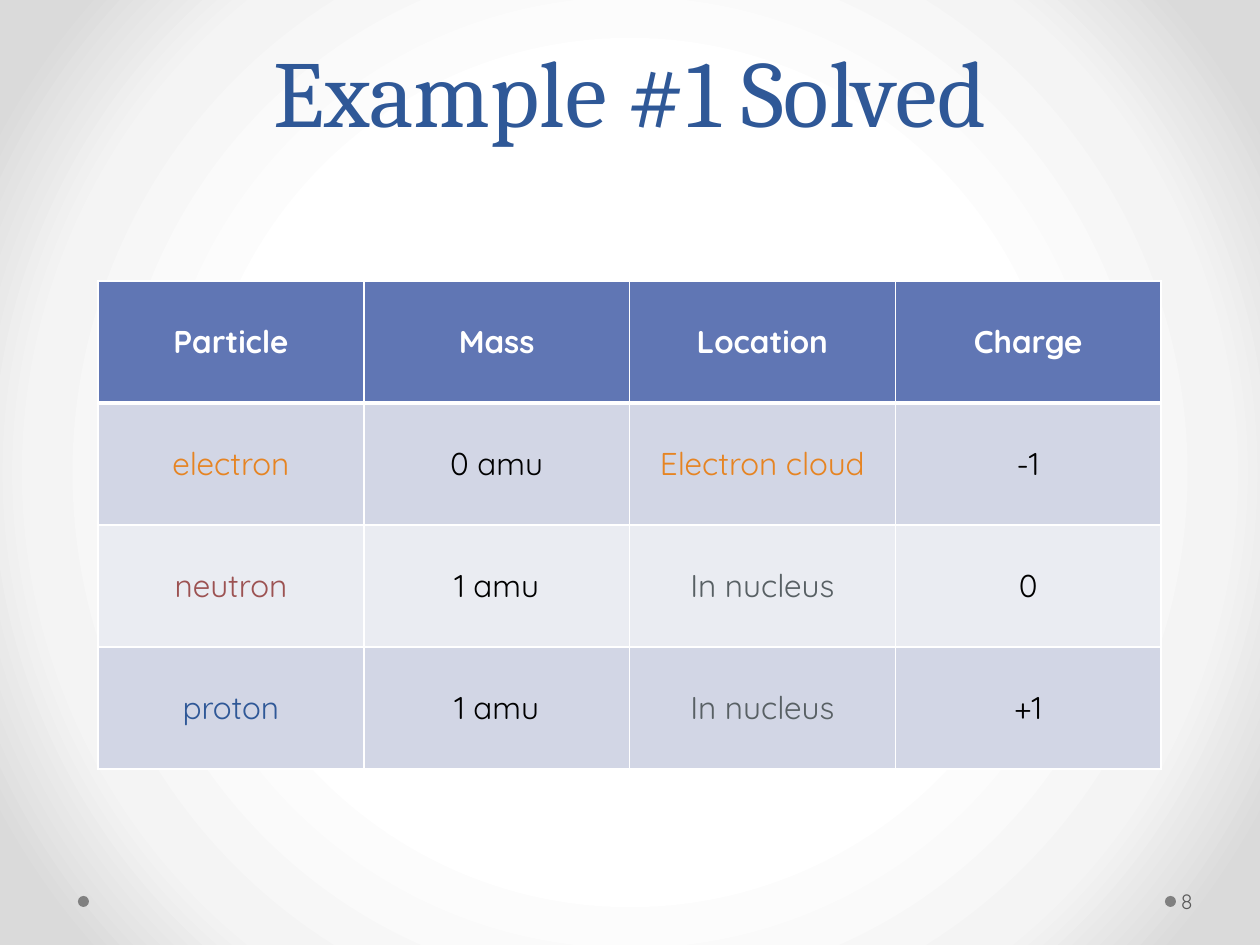
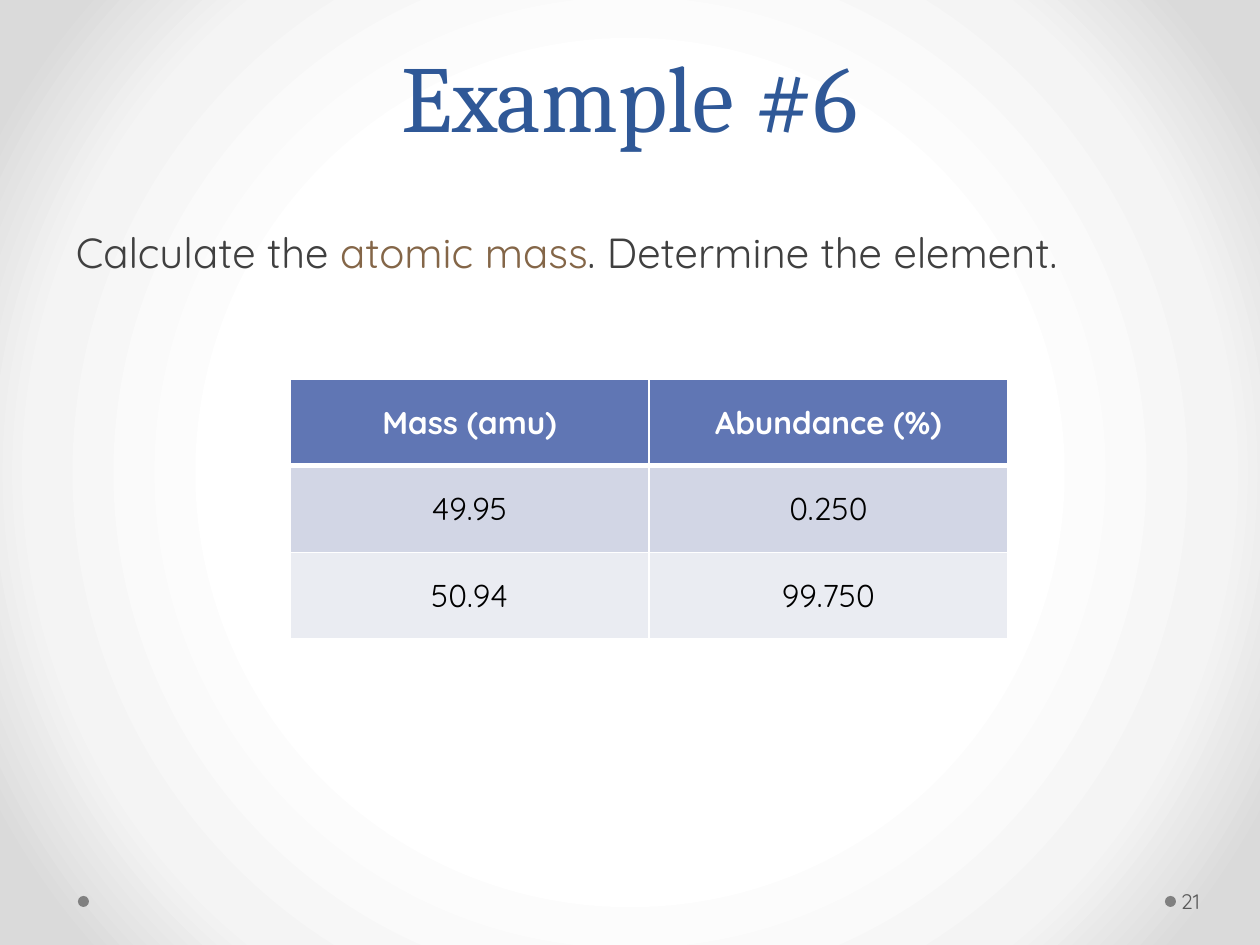
from dataclasses import dataclass

from lxml import etree
from pptx import Presentation
from pptx.dml.color import RGBColor
from pptx.enum.shapes import MSO_SHAPE
from pptx.enum.text import MSO_ANCHOR, MSO_AUTO_SIZE, PP_ALIGN
from pptx.oxml import parse_xml
from pptx.oxml.ns import qn
from pptx.util import Emu, Pt

ELLIPSE = MSO_SHAPE.OVAL
TOP, MIDDLE, BOTTOM = MSO_ANCHOR.TOP, MSO_ANCHOR.MIDDLE, MSO_ANCHOR.BOTTOM
LEFT, CENTER = PP_ALIGN.LEFT, PP_ALIGN.CENTER
NO_AUTOFIT = MSO_AUTO_SIZE.NONE

PX_PER_INCH = 126
TITLE_ONLY = 5
A_NS = "http://schemas.openxmlformats.org/drawingml/2006/main"


def px(length):
    return Emu(round(length * 914400 / PX_PER_INCH))


@dataclass(frozen=True)
class Theme:
    # Fonts and type sizes
    title_font: str = "Cambria"
    body_font: str = "Quicksand"
    title_size: int = 54
    title_leading: int = 58
    body_size: int = 24
    table_size: int = 18
    number_size: int = 12
    # Colours
    blue: str = "2F5897"
    orange: str = "E68422"
    red: str = "9C5252"
    slate: str = "586064"
    brown: str = "846648"
    black: str = "000000"
    white: str = "FFFFFF"
    body: str = "404040"
    number: str = "595959"
    dot: str = "808080"
    header_fill: str = "6076B4"
    row_fills: tuple = ("D2D6E5", "EAECF2")
    glow: tuple = ((50, "FFFFFF"), (76, "F4F4F4"), (92, "DADADA"))


class PageBuilder:
    def __init__(self, deck, theme):
        self.deck = deck
        self.theme = theme
        self.page = None

    def background(self):
        """Give every page the round glow through the slide master."""
        stops = "".join(
            f'<a:gs pos="{place * 1000}"><a:srgbClr val="{color}"/></a:gs>'
            for place, color in self.theme.glow)
        glow = parse_xml(
            f'<a:gradFill xmlns:a="{A_NS}" rotWithShape="1"><a:gsLst>{stops}</a:gsLst>'
            '<a:path path="circle"><a:fillToRect l="50000" t="50000" r="50000" b="50000"/>'
            '</a:path></a:gradFill>')
        master = self.deck.slide_master
        master.background.fill.gradient()
        plain = master.element.find(".//" + qn("p:bgPr")).find(qn("a:gradFill"))
        plain.getparent().replace(plain, glow)

    def new_page(self, title, number, title_top, title_height):
        self.page = self.deck.slides.add_slide(self.deck.slide_layouts[TITLE_ONLY])
        self.title(title, title_top, title_height)
        for left in (1165, 78):
            self.dot(left, 896)
        self.text(1177, 876, 77, 50, [(number, self.theme.number)],
                  self.theme.number_size, MIDDLE, (4, 6, 6, 6))

    def span(self, para, text, size, color, font=None, bold=False):
        span = para.add_run()
        span.text = text
        span.font.name = font or self.theme.body_font
        span.font.size = Pt(size)
        span.font.bold = bold
        span.font.color.rgb = RGBColor.from_string(color)

    def title(self, text, top, height):
        box = self.page.shapes.title
        box.left, box.top, box.width, box.height = px(63), px(top), px(1134), px(height)
        frame = box.text_frame
        frame.auto_size = NO_AUTOFIT
        frame.vertical_anchor = BOTTOM
        para = frame.paragraphs[0]
        para.alignment = CENTER
        para.line_spacing = Pt(self.theme.title_leading)
        self.span(para, text, self.theme.title_size, self.theme.blue, self.theme.title_font)

    def dot(self, left, top):
        dot = self.page.shapes.add_shape(ELLIPSE, px(left), px(top), px(11), px(11))
        dot.shadow.inherit = False
        dot.fill.solid()
        dot.fill.fore_color.rgb = RGBColor.from_string(self.theme.dot)
        dot.line.fill.background()

    def text(self, left, top, width, height, parts, size, anchor=TOP, insets=(13, 6, 13, 6)):
        box = self.page.shapes.add_textbox(px(left), px(top), px(width), px(height))
        frame = box.text_frame
        frame.word_wrap = True
        frame.vertical_anchor = anchor
        (frame.margin_left, frame.margin_top,
         frame.margin_right, frame.margin_bottom) = map(px, insets)
        para = frame.paragraphs[0]
        para.alignment = LEFT
        for text, color in parts:
            self.span(para, text, size, color)

    def table(self, left, top, width, height, header, rows, accents=None):
        """Draw a banded table; accents maps a cell's text to its colour."""
        theme, accents = self.theme, accents or {}
        lines = [header, *rows]
        table = self.page.shapes.add_table(
            len(lines), len(header), px(left), px(top), px(width), px(height)).table
        for row, values in enumerate(lines):
            is_header = row == 0
            fill = theme.header_fill if is_header else theme.row_fills[(row - 1) % 2]
            for column, value in enumerate(values):
                cell = table.cell(row, column)
                self.borders(cell, top=3 if row == 1 else 1, bottom=3 if is_header else 1)
                cell.fill.solid()
                cell.fill.fore_color.rgb = RGBColor.from_string(fill)
                cell.vertical_anchor = MIDDLE
                para = cell.text_frame.paragraphs[0]
                para.alignment = CENTER
                color = theme.white if is_header else accents.get(value, theme.black)
                self.span(para, value, theme.table_size, color, bold=is_header)

    def borders(self, cell, top, bottom):
        properties = cell._tc.get_or_add_tcPr()
        for side, weight in (("lnL", 1), ("lnR", 1), ("lnT", top), ("lnB", bottom)):
            line = etree.SubElement(properties, qn(f"a:{side}"), w=str(Pt(weight)))
            fill = etree.SubElement(line, qn("a:solidFill"))
            etree.SubElement(fill, qn("a:srgbClr"), val=self.theme.white)


def particle_page(builder):
    theme = builder.theme
    builder.new_page("Example #1 Solved", "8", 1, 152)
    builder.table(
        98, 281, 1063, 488,
        ["Particle", "Mass", "Location", "Charge"],
        [["electron", "0 amu", "Electron cloud", "-1"],
         ["neutron", "1 amu", "In nucleus", "0"],
         ["proton", "1 amu", "In nucleus", "+1"]],
        {"electron": theme.orange, "Electron cloud": theme.orange,
         "neutron": theme.red, "proton": theme.blue, "In nucleus": theme.slate})


def atomic_mass_page(builder):
    theme = builder.theme
    builder.new_page("Example #6", "21", 4, 154)
    builder.text(63, 220, 1134, 624,
                 [("Calculate the ", theme.body), ("atomic mass", theme.brown),
                  (". Determine the element.", theme.body)], theme.body_size)
    builder.table(290, 379, 718, 260,
                  ["Mass (amu)", "Abundance (%)"],
                  [["49.95", "0.250"], ["50.94", "99.750"]])


def main():
    deck = Presentation()
    deck.slide_width, deck.slide_height = px(1260), px(945)
    builder = PageBuilder(deck, Theme())
    builder.background()
    particle_page(builder)
    atomic_mass_page(builder)
    deck.save("out.pptx")


if __name__ == "__main__":
    main()
